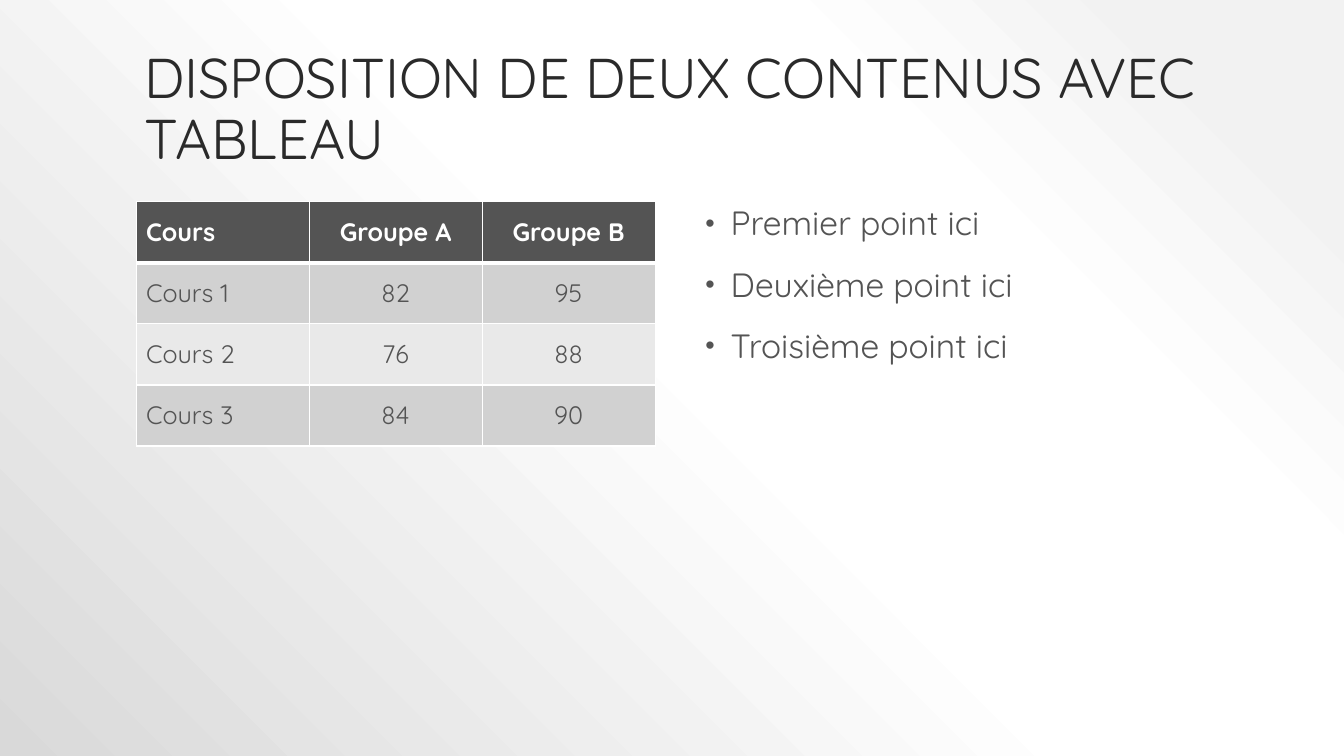
from dataclasses import dataclass

from lxml import etree
from pptx import Presentation
from pptx.dml.color import RGBColor
from pptx.enum.text import MSO_ANCHOR, MSO_AUTO_SIZE, PP_ALIGN
from pptx.oxml import parse_xml
from pptx.oxml.ns import nsdecls, qn
from pptx.util import Cm, Pt

BOTTOM, MIDDLE, TOP = MSO_ANCHOR.BOTTOM, MSO_ANCHOR.MIDDLE, MSO_ANCHOR.TOP
LEFT, CENTER = PP_ALIGN.LEFT, PP_ALIGN.CENTER
NO_AUTOFIT = MSO_AUTO_SIZE.NONE


@dataclass(frozen=True)
class Theme:
    font: str = "Quicksand"
    title: str = "2A2A2A"
    text: str = "545454"
    white: str = "FFFFFF"
    odd_row: str = "D1D1D1"
    even_row: str = "E9E9E9"
    title_size: int = 40
    list_size: int = 24
    table_size: int = 18
    rule: int = 1
    header_rule: int = 3
    backdrop: tuple = ((10, "F2F2F2"), (28, "FFFFFF"), (48, "FFFFFF"), (100, "D9D9D9"))


@dataclass(frozen=True)
class Box:
    left: float
    top: float
    width: float
    height: float

    def lengths(self) -> tuple:
        return Cm(self.left), Cm(self.top), Cm(self.width), Cm(self.height)


@dataclass(frozen=True)
class Course:
    name: str
    group_a: str
    group_b: str

    def values(self) -> tuple:
        return self.name, self.group_a, self.group_b


THEME = Theme()
TITLE = "DISPOSITION DE DEUX CONTENUS AVEC TABLEAU"
TITLE_BOX = Box(3.38, 0.76, 27.1, 3.69)
TABLE_BOX = Box(3.43, 5.08, 13.08, 6.16)
LIST_BOX = Box(17.4, 5.08, 13.08, 12.07)
COURSES = (
    Course("Cours", "Groupe A", "Groupe B"),
    Course("Cours 1", "82", "95"),
    Course("Cours 2", "76", "88"),
    Course("Cours 3", "84", "90"),
)
POINTS = ("Premier point ici", "Deuxième point ici", "Troisième point ici")


def add_run(p, text: str, size: int, color: str, bold: bool = False) -> None:
    r = p.add_run()
    r.text = text
    r.font.name = THEME.font
    r.font.size = Pt(size)
    r.font.bold = bold
    r.font.color.rgb = RGBColor.from_string(color)


def place(sp, box: Box, anchor):
    """Move a placeholder and return its text frame."""
    sp.left, sp.top, sp.width, sp.height = box.lengths()
    tf = sp.text_frame
    tf.word_wrap = True
    tf.auto_size = NO_AUTOFIT
    tf.vertical_anchor = anchor
    return tf


def set_background(s) -> None:
    stops = "".join(
        f'<a:gs pos="{pos * 1000}"><a:srgbClr val="{color}"/></a:gs>'
        for pos, color in THEME.backdrop
    )
    bg = parse_xml(
        f'<p:bg {nsdecls("p", "a")}><p:bgPr><a:gradFill rotWithShape="1">'
        f"<a:gsLst>{stops}</a:gsLst>"
        '<a:path path="circle"><a:fillToRect l="100000" b="100000"/></a:path>'
        "</a:gradFill><a:effectLst/></p:bgPr></p:bg>"
    )
    s.element.cSld.insert(0, bg)


def set_bullet(p) -> None:
    pPr = p._p.get_or_add_pPr()
    pPr.set("marL", str(Cm(0.76)))
    pPr.set("indent", str(Cm(-0.64)))
    color = etree.SubElement(pPr, qn("a:buClr"))
    etree.SubElement(color, qn("a:srgbClr"), val=THEME.text)
    etree.SubElement(pPr, qn("a:buSzPct"), val="80000")
    etree.SubElement(pPr, qn("a:buFont"), typeface="Arial")
    etree.SubElement(pPr, qn("a:buChar"), char="•")


def set_borders(cell, top: int, bottom: int) -> None:
    tcPr = cell._tc.get_or_add_tcPr()
    widths = {"lnL": THEME.rule, "lnR": THEME.rule, "lnT": top, "lnB": bottom}
    for i, (side, width) in enumerate(widths.items()):
        tcPr.insert(i, parse_xml(
            f'<a:{side} {nsdecls("a")} w="{Pt(width)}"><a:solidFill>'
            f'<a:srgbClr val="{THEME.white}"/></a:solidFill></a:{side}>'
        ))


def add_title(s) -> None:
    p = place(s.shapes.title, TITLE_BOX, BOTTOM).paragraphs[0]
    p.alignment = LEFT
    p.line_spacing = 0.9
    add_run(p, TITLE, THEME.title_size, THEME.title)


def add_courses(s) -> None:
    rows, cols = len(COURSES), len(COURSES[0].values())
    table = s.shapes.add_table(rows, cols, *TABLE_BOX.lengths()).table
    for i, course in enumerate(COURSES):
        header = i == 0
        fill = THEME.text if header else THEME.odd_row if i % 2 else THEME.even_row
        for j, text in enumerate(course.values()):
            cell = table.cell(i, j)
            cell.vertical_anchor = MIDDLE
            cell.fill.solid()
            cell.fill.fore_color.rgb = RGBColor.from_string(fill)
            set_borders(
                cell,
                top=THEME.header_rule if i == 1 else THEME.rule,
                bottom=THEME.header_rule if header else THEME.rule,
            )
            p = cell.text_frame.paragraphs[0]
            p.alignment = CENTER if j else LEFT
            add_run(p, text, THEME.table_size, THEME.white if header else THEME.text, header)


def add_points(s) -> None:
    tf = place(s.placeholders[1], LIST_BOX, TOP)
    for i, point in enumerate(POINTS):
        p = tf.add_paragraph() if i else tf.paragraphs[0]
        p.alignment = LEFT
        p.line_spacing = 0.9
        p.space_before = Pt(18)
        set_bullet(p)
        add_run(p, point, THEME.list_size, THEME.text)


def main() -> None:
    prs = Presentation()
    prs.slide_width, prs.slide_height = Cm(33.87), Cm(19.05)
    s = prs.slides.add_slide(prs.slide_layouts[1])

    # Backdrop and title
    set_background(s)
    add_title(s)

    # Left: results table; right: key points
    add_courses(s)
    add_points(s)

    prs.save("out.pptx")


if __name__ == "__main__":
    main()
